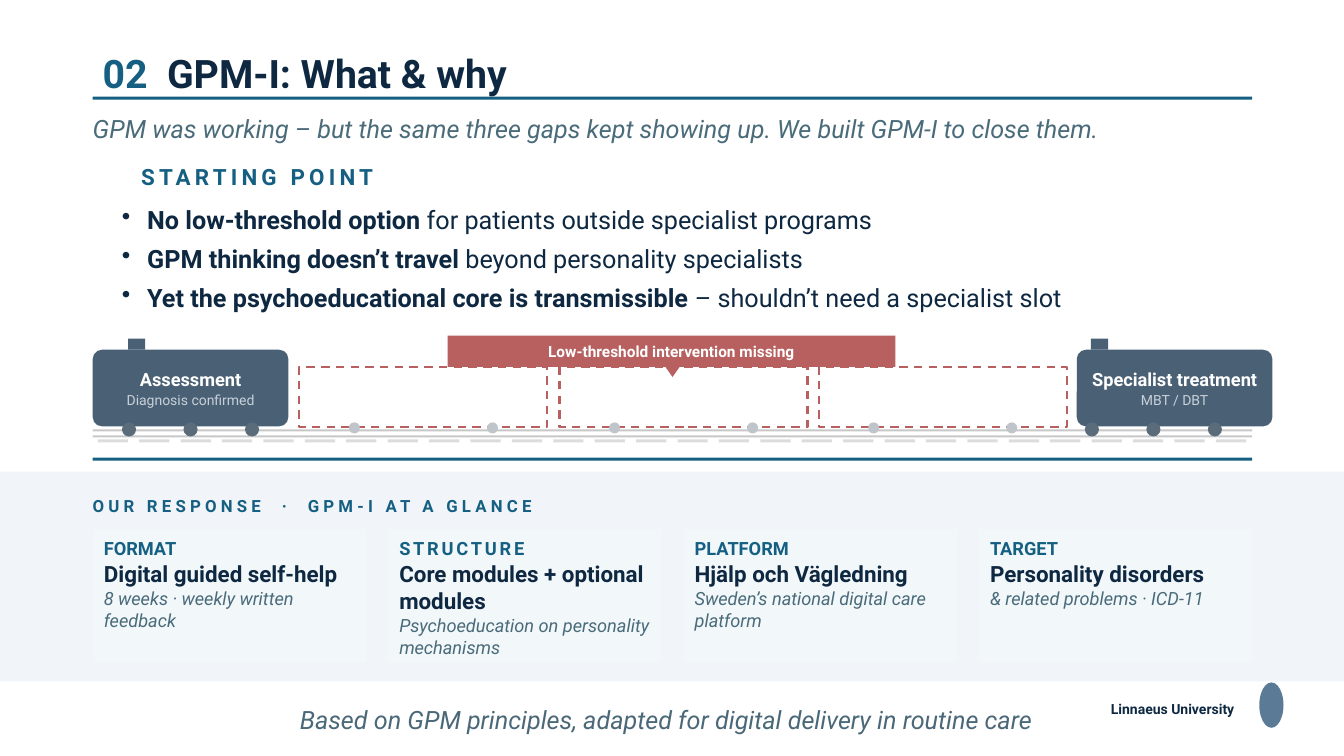
from lxml import etree
from pptx import Presentation
from pptx.dml.color import RGBColor
from pptx.enum.dml import MSO_LINE
from pptx.enum.shapes import MSO_SHAPE as SHAPE
from pptx.enum.text import MSO_ANCHOR as ANCHOR, PP_ALIGN as ALIGN
from pptx.oxml.ns import qn
from pptx.util import Inches, Pt

FONT = "Roboto"
WHITE = RGBColor(0xFF, 0xFF, 0xFF)
TEAL = RGBColor(0x15, 0x60, 0x82)
NAVY = RGBColor(0x0E, 0x28, 0x41)
SLATE = RGBColor(0x4A, 0x6B, 0x7A)
FOOTER_SLATE = RGBColor(0x4A, 0x68, 0x78)
BAND = RGBColor(0xF1, 0xF4, 0xF8)
CARD = RGBColor(0xF2, 0xF7, 0xFA)
RED = RGBColor(0xB8, 0x60, 0x60)
WAGON = RGBColor(0x4A, 0x61, 0x75)
WAGON_NOTE = RGBColor(0xC8, 0xD0, 0xDA)
WHEEL = RGBColor(0x5A, 0x6B, 0x7A)
GHOST_WHEEL = RGBColor(0xC0, 0xC5, 0xCC)
RAIL = RGBColor(0xC8, 0xC8, 0xC8)
SLEEPER = RGBColor(0xDC, 0xDC, 0xDC)
EMBLEM = RGBColor(0x5A, 0x7A, 0x96)

LEFT, WIDTH = 0.92, 11.5

presentation = Presentation()
presentation.slide_width = Inches(13.33)
presentation.slide_height = Inches(7.5)
slide = presentation.slides.add_slide(presentation.slide_layouts[6])


def add_box(box, fill=None, kind=SHAPE.RECTANGLE):
    """Add a borderless preset shape, or a text box when kind is None."""
    lengths = [Inches(length) for length in box]
    if kind is None:
        return slide.shapes.add_textbox(*lengths)
    shape = slide.shapes.add_shape(kind, *lengths)
    shape.shadow.inherit = False
    shape.line.fill.background()
    if fill is None:
        shape.fill.background()
    else:
        shape.fill.solid()
        shape.fill.fore_color.rgb = fill
    return shape


def write(shape, paragraphs, insets=(0, 0, 0, 0), anchor=ANCHOR.TOP,
          align=ALIGN.LEFT, wrap=True):
    """Each paragraph is (space after, runs); a run is (text, size, colour, style, tracking)."""
    frame = shape.text_frame
    frame.word_wrap = wrap
    frame.vertical_anchor = anchor
    (frame.margin_left, frame.margin_top,
     frame.margin_right, frame.margin_bottom) = [Inches(inset) for inset in insets]
    for index, (space_after, runs) in enumerate(paragraphs):
        paragraph = frame.add_paragraph() if index else frame.paragraphs[0]
        paragraph.alignment = align
        paragraph.space_after = Pt(space_after)
        for text, size, colour, style, tracking in runs:
            run = paragraph.add_run()
            run.text = text
            run.font.name = FONT
            run.font.size = Pt(size)
            run.font.color.rgb = colour
            run.font.bold = style == "bold"
            run.font.italic = style == "italic"
            if tracking:
                run._r.get_or_add_rPr().set("spc", str(tracking * 100))


# Emblem placeholder, response band and rules
add_box((12.49, 6.77, 0.24, 0.45), EMBLEM, SHAPE.OVAL)
add_box((0, 4.68, 13.33, 2.08), BAND)
for rule_top in (4.54, 0.96):
    add_box((LEFT, rule_top, WIDTH, 0.03), TEAL)

# Title and university name
label_insets = (0.1, 0.05, 0.1, 0.05)
write(add_box((LEFT, 0.47, WIDTH, 0.5), kind=None),
      [(0, [("02  ", 28, TEAL, "bold", 0), ("GPM-I: What & why", 28, NAVY, "bold", 0)])],
      label_insets, ANCHOR.MIDDLE, wrap=False)
write(add_box((10.92, 6.92, 1.56, 0.22), kind=None),
      [(0, [("Linnaeus University", 10, NAVY, "bold", 0)])],
      label_insets, ANCHOR.MIDDLE, wrap=False)

# Single-line texts
for box, text, size, colour, style, tracking, align in (
    ((LEFT, 1.12, WIDTH, 0.28),
     "GPM was working – but the same three gaps kept showing up. We built GPM-I to close them.",
     18, SLATE, "italic", 0, ALIGN.LEFT),
    ((1.4, 1.62, 8.61, 0.39), "STARTING POINT", 16, TEAL, "bold", 3, ALIGN.LEFT),
    ((LEFT, 4.92, WIDTH, 0.28), "OUR RESPONSE  ·  GPM-I AT A GLANCE",
     12, TEAL, "bold", 3, ALIGN.LEFT),
    ((0.86, 6.99, WIDTH, 0.25),
     "Based on GPM principles, adapted for digital delivery in routine care",
     18, FOOTER_SLATE, "italic", 0, ALIGN.CENTER),
):
    write(add_box(box, kind=None), [(0, [(text, size, colour, style, tracking)])], align=align)

# Starting-point bullets
gaps = (
    ("No low-threshold option", " for patients outside specialist programs", 4),
    ("GPM thinking doesn’t travel", " beyond personality specialists", 4),
    ("Yet the psychoeducational core is transmissible",
     " – shouldn’t need a specialist slot", 0),
)
bullet_box = add_box((1.21, 1.99, 11.56, 1.39), kind=None)
write(bullet_box, [(space_after, [(lead, 18, NAVY, "bold", 0), (rest, 18, NAVY, "", 0)])
                   for lead, rest, space_after in gaps])
for paragraph in bullet_box.text_frame.paragraphs:
    paragraph.line_spacing = Pt(24)
    properties = paragraph._p.get_or_add_pPr()
    properties.set("marL", str(Inches(0.25)))
    properties.set("indent", str(Inches(-0.25)))
    etree.SubElement(properties, qn("a:buChar")).set("char", "•")

# Response cards
cards = (
    ("FORMAT", 0, "Digital guided self-help", "8 weeks · weekly written feedback"),
    ("STRUCTURE", 2, "Core modules + optional modules",
     "Psychoeducation on personality mechanisms"),
    ("PLATFORM", 0, "Hjälp och Vägledning", "Sweden’s national digital care platform"),
    ("TARGET", 0, "Personality disorders", "& related problems · ICD-11"),
)
for index, (heading, tracking, headline, detail) in enumerate(cards):
    write(add_box((LEFT + index * 2.93, 5.25, 2.71, 1.32), CARD),
          [(0.8, [(heading, 13, TEAL, "bold", tracking)]),
           (0.4, [(headline, 16, NAVY, "bold", 0)]),
           (0, [(detail, 13, SLATE, "italic", 0)])],
          (0.11, 0.08, 0.08, 0.06))

# Missing-link banner with pointer
train_insets = (0.04, 0.02, 0.04, 0.02)
write(add_box((4.44, 3.33, 4.44, 0.31), RED),
      [(0, [("Low-threshold intervention missing", 11, WHITE, "bold", 0)])],
      train_insets, ANCHOR.MIDDLE, ALIGN.CENTER)
add_box((6.6, 3.64, 0.14, 0.1), RED, SHAPE.ISOSCELES_TRIANGLE).rotation = 180

# Rails and sleepers
for rail_top in (4.26, 4.32):
    add_box((LEFT, rail_top, WIDTH, 0.02), RAIL)
sleeper_count = 28
for index in range(sleeper_count):
    add_box((0.97 + index * WIDTH / sleeper_count, 4.36, 0.3, 0.03), SLEEPER)

# Wagons at both ends
for left, chimney, first_wheel, name, note in (
    (LEFT, 1.27, 1.21, "Assessment", "Diagnosis confirmed"),
    (10.68, 10.82, 10.76, "Specialist treatment", "MBT / DBT"),
):
    add_box((chimney, 3.36, 0.17, 0.11), WAGON)
    wagon = add_box((left, 3.47, 1.94, 0.76), WAGON, SHAPE.ROUNDED_RECTANGLE)
    wagon.adjustments[0] = 0.12
    write(wagon, [(1, [(name, 13, WHITE, "bold", 0)]), (0, [(note, 10, WAGON_NOTE, "", 0)])],
          train_insets, ANCHOR.MIDDLE, ALIGN.CENTER)
    for index in range(3):
        add_box((first_wheel + index * 0.61, 4.19, 0.14, 0.14), WHEEL, SHAPE.OVAL)

# Dashed missing wagons
for left in (2.97, 5.55, 8.12):
    ghost = add_box((left, 3.64, 2.46, 0.6))
    ghost.line.color.rgb = RED
    ghost.line.width = Pt(1.5)
    ghost.line.dash_style = MSO_LINE.DASH
    for offset in (0.49, 1.86):
        add_box((left + offset, 4.19, 0.11, 0.11), GHOST_WHEEL, SHAPE.OVAL)

presentation.save("out.pptx")
